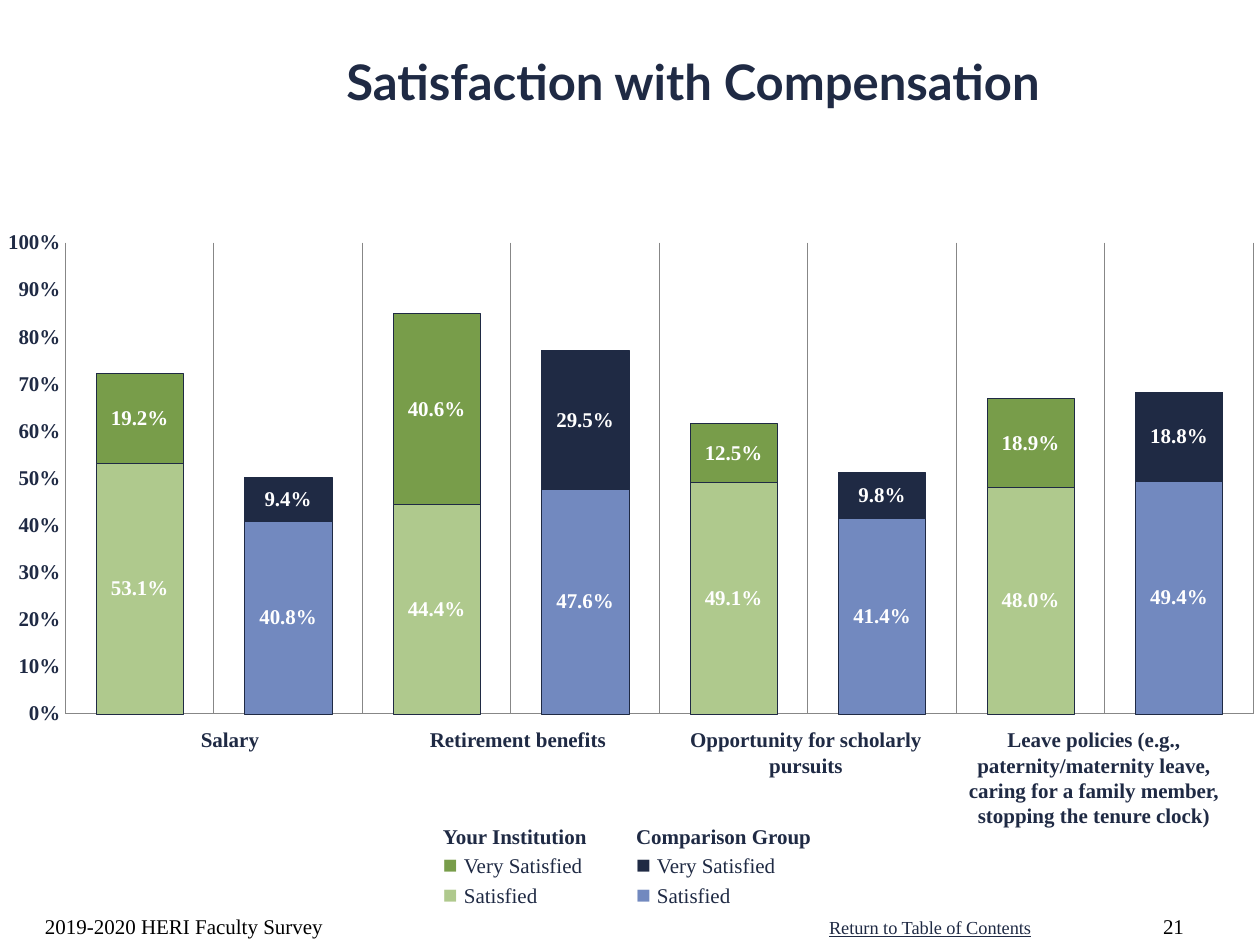
from dataclasses import dataclass

from lxml.etree import SubElement
from pptx import Presentation
from pptx.chart.data import CategoryChartData
from pptx.dml.color import RGBColor
from pptx.enum.chart import XL_CHART_TYPE as ChartType
from pptx.enum.chart import XL_LABEL_POSITION as LabelPosition
from pptx.enum.chart import XL_TICK_LABEL_POSITION as TickLabels
from pptx.enum.chart import XL_TICK_MARK as TickMark
from pptx.enum.text import MSO_ANCHOR as Anchor
from pptx.enum.text import PP_ALIGN as Align
from pptx.oxml.ns import qn
from pptx.util import Emu, Pt

PX_PER_INCH = 126


@dataclass(frozen=True)
class Theme:
    heading: str = "Lato"
    body: str = "Times New Roman"
    navy: str = "1F2A44"
    blue: str = "7289BF"
    green: str = "789D4A"
    light_green: str = "AFC98D"
    white: str = "FFFFFF"
    black: str = "000000"
    grey: str = "878787"
    title_size: float = 28
    text_size: float = 12
    marker_size: float = 14
    link_size: float = 10.5


THEME = Theme()
QUESTIONS = [
    "Salary",
    "Retirement benefits",
    "Opportunity for scholarly pursuits",
    "Leave policies (e.g., paternity/maternity leave, caring for a family member, "
    "stopping the tenure clock)",
]
# Bars alternate: your institution, comparison group.
SATISFIED = [0.531, 0.408, 0.444, 0.476, 0.491, 0.414, 0.48, 0.494]
VERY_SATISFIED = [0.192, 0.094, 0.406, 0.295, 0.125, 0.098, 0.189, 0.188]
SERIES_COLORS = [(THEME.light_green, THEME.blue), (THEME.green, THEME.navy)]
LEGEND_GROUPS = [
    ("Your Institution", THEME.green, THEME.light_green),
    ("Comparison Group", THEME.navy, THEME.blue),
]


def px(length):
    return Emu(round(length * 914400 / PX_PER_INCH))


def style_font(font, color=THEME.navy, size=THEME.text_size, bold=False, name=THEME.body):
    font.name, font.size, font.bold = name, Pt(size), bold
    font.color.rgb = RGBColor.from_string(color)


def paint(fill, color):
    fill.solid()
    fill.fore_color.rgb = RGBColor.from_string(color)


def add_text(page, box, text, align=Align.LEFT, anchor=Anchor.TOP, side_inset=13, **font):
    frame = page.shapes.add_textbox(*map(px, box)).text_frame
    frame.word_wrap = True
    frame.vertical_anchor = anchor
    frame.margin_left = frame.margin_right = px(side_inset)
    frame.margin_top = frame.margin_bottom = px(6)
    frame.text = text
    for para in frame.paragraphs:
        para.alignment = align
        for span in para.runs:
            style_font(span.font, **font)
    return frame


def add_title(page, box):
    frame = add_text(page, box, "Satisfaction with Compensation", Align.CENTER, Anchor.MIDDLE,
                     size=THEME.title_size, bold=True, name=THEME.heading)
    frame.margin_bottom = px(65)


def set_plot_area(chart, **fractions):
    """Fix the inner plot area, in fractions of the chart's size."""
    area = chart._chartSpace.chart.plotArea
    for old in area.findall(qn("c:layout")):
        area.remove(old)
    layout = area.makeelement(qn("c:layout"))
    area.insert(0, layout)
    manual = SubElement(layout, qn("c:manualLayout"))
    settings = {"layoutTarget": "inner", "xMode": "edge", "yMode": "edge", **fractions}
    for tag, value in settings.items():
        SubElement(manual, qn(f"c:{tag}")).set("val", str(value))


def style_axes(chart):
    categories, values = chart.category_axis, chart.value_axis
    categories.tick_label_position = TickLabels.NONE
    categories.has_major_gridlines = True
    values.has_major_gridlines = False
    values.minimum_scale, values.maximum_scale, values.major_unit = 0, 1, 0.1
    values.tick_labels.number_format = "0%"
    values.tick_labels.number_format_is_linked = False
    style_font(values.tick_labels.font, bold=True)
    for axis in (categories, values):
        axis.major_tick_mark = axis.minor_tick_mark = TickMark.NONE
    for line in (categories.format.line, values.format.line,
                 categories.major_gridlines.format.line):
        line.width = Pt(0.75)
        paint(line.fill, THEME.grey)


def style_series(series, colors):
    paint(series.format.fill, colors[0])
    for index in range(len(series.values)):
        shape = series.points[index].format
        paint(shape.fill, colors[index % 2])
        paint(shape.line.fill, THEME.navy)
        shape.line.width = Pt(0.25)
    labels = series.data_labels
    labels.show_value = True
    labels.number_format = "0.0%"
    labels.number_format_is_linked = False
    labels.position = LabelPosition.CENTER
    style_font(labels.font, THEME.white, bold=True)


def add_satisfaction_chart(page, box):
    data = CategoryChartData(number_format="0.0%")
    data.categories = [str(number + 1) for number in range(len(SATISFIED))]
    data.add_series("Series 1", SATISFIED)
    data.add_series("Series 2", VERY_SATISFIED)
    chart = page.shapes.add_chart(ChartType.COLUMN_STACKED, *map(px, box), data).chart
    chart.has_legend = chart.has_title = False
    style_font(chart.font, bold=True)
    plot = chart.plots[0]
    plot.gap_width, plot.overlap, plot.vary_by_categories = 70, 100, False
    set_plot_area(chart, x=0.045, y=0.043, w=0.955, h=0.936)
    style_axes(chart)
    for series, colors in zip(plot.series, SERIES_COLORS):
        style_series(series, colors)


def add_question_labels(page, box):
    left, top, width, height = box
    column = width // len(QUESTIONS)
    for index, question in enumerate(QUESTIONS):
        add_text(page, (left + index * column, top, column, height), question,
                 Align.CENTER, side_inset=0, bold=True)


def add_legend(page, box):
    left, top, width, height = box
    column = width // len(LEGEND_GROUPS)
    for index, (group, *colors) in enumerate(LEGEND_GROUPS):
        frame = add_text(page, (left + index * column, top, column, height), group,
                         side_inset=0, bold=True)
        for color, answer in zip(colors, ("Very Satisfied", "Satisfied")):
            para = frame.add_paragraph()
            para.text = "■ "
            style_font(para.runs[0].font, color, THEME.marker_size)
            span = para.add_run()
            span.text = answer
            style_font(span.font)


def add_footer(page, box):
    left, top, width, height = box
    add_text(page, (left, top, 400, height), "2019-2020 HERI Faculty Survey",
             anchor=Anchor.BOTTOM, color=THEME.black)
    link = add_text(page, (left + 784, top + 28, 230, 35), "Return to Table of Contents",
                    size=THEME.link_size)
    link.word_wrap = False
    link.paragraphs[0].runs[0].font.underline = True
    add_text(page, (left + width - 63, top, 63, height), "21", Align.RIGHT, Anchor.BOTTOM,
             color=THEME.black)


def main():
    deck = Presentation()
    deck.slide_width, deck.slide_height = px(1260), px(945)
    page = deck.slides.add_slide(deck.slide_layouts[6])
    add_title(page, (126, 21, 1134, 179))
    add_satisfaction_chart(page, (8, 221, 1246, 504))
    add_question_labels(page, (86, 721, 1152, 115))
    add_legend(page, (443, 818, 386, 123))
    add_footer(page, (32, 882, 1165, 63))
    deck.save("out.pptx")


if __name__ == "__main__":
    main()
